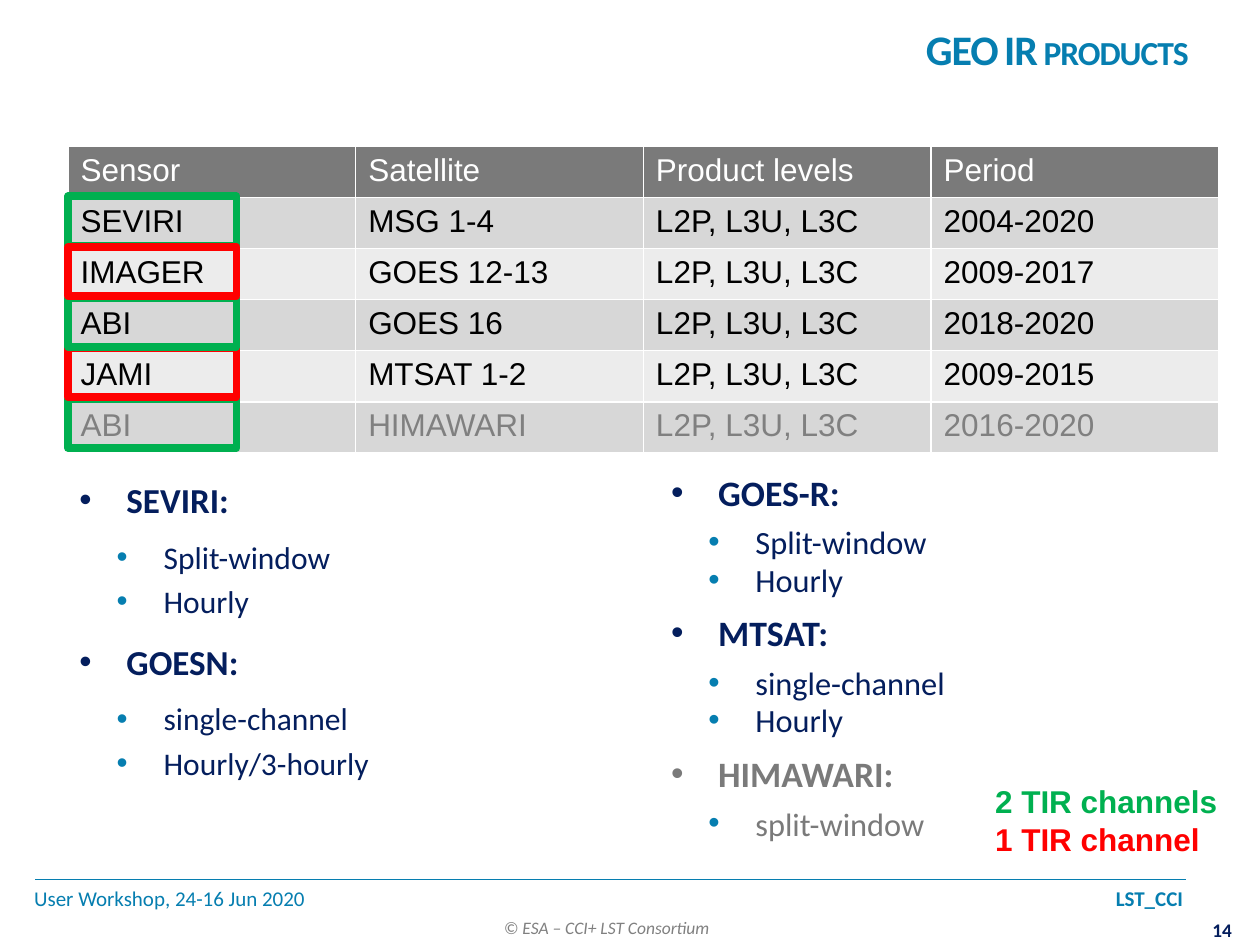
from dataclasses import dataclass

from lxml import etree
from pptx import Presentation
from pptx import util as u
from pptx.dml.color import RGBColor
from pptx.enum import shapes as s, text as t
from pptx.oxml.ns import qn

COLOURS = {
    "blue": "067EB0", "navy": "041E5D", "grey": "808080", "dark_grey": "7A7A7A",
    "odd_band": "D7D7D7", "even_band": "ECECEC", "white": "FFFFFF",
    "black": "000000", "green": "00B050", "red": "FF0000",
}
HEADINGS = ("Sensor", "Satellite", "Product levels", "Period")
LEVELS = "L2P, L3U, L3C"


@dataclass(frozen=True)
class Product:
    sensor: str
    satellite: str
    period: str
    frame: str
    colour: str = "black"


@dataclass(frozen=True)
class Topic:
    name: str
    details: tuple[str, ...]
    colour: str = "navy"


@dataclass(frozen=True)
class TopicList:
    left: float
    heading_size: float
    detail_size: float
    line_spacing: float
    topics: tuple[Topic, ...]


PRODUCTS = (
    Product("SEVIRI", "MSG 1-4", "2004-2020", "green"),
    Product("IMAGER", "GOES 12-13", "2009-2017", "red"),
    Product("ABI", "GOES 16", "2018-2020", "green"),
    Product("JAMI", "MTSAT 1-2", "2009-2015", "red"),
    Product("ABI", "HIMAWARI", "2016-2020", "green", "grey"),
)
TOPIC_LISTS = (
    TopicList(1.35, 20, 18, 1.0, (
        Topic("SEVIRI:", ("Split-window", "Hourly")),
        Topic("GOESN:", ("single-channel", "Hourly/3-hourly")),
    )),
    TopicList(13.28, 20.4, 18.5, 0.8, (
        Topic("GOES-R:", ("Split-window", "Hourly")),
        Topic("MTSAT:", ("single-channel", "Hourly")),
        Topic("HIMAWARI:", ("split-window",), "dark_grey"),
    )),
)


def rgb(name: str) -> RGBColor:
    return RGBColor.from_string(COLOURS[name])


def set_values(target, values: dict) -> None:
    for name, value in values.items():
        setattr(target, name, value)


def add_run(paragraph, words: str, size: float, colour: str, font: str = "Calibri", **values):
    run = paragraph.add_run()
    run.text = words
    set_values(run.font, {"name": font, "size": u.Pt(size), **values})
    run.font.color.rgb = rgb(colour)
    return run


def add_text_frame(slide, left: float, top: float, width: float, height: float, **values):
    box = slide.shapes.add_textbox(u.Cm(left), u.Cm(top), u.Cm(width), u.Cm(height))
    set_values(box.text_frame, {"word_wrap": True, **values})
    return box.text_frame


def add_bullet(paragraph, margin: float, colour: str) -> None:
    properties = paragraph._p.get_or_add_pPr()
    properties.set("marL", str(u.Cm(margin)))
    properties.set("indent", str(-u.Cm(0.95)))
    bullet_colour = etree.SubElement(properties, qn("a:buClr"))
    etree.SubElement(bullet_colour, qn("a:srgbClr"), val=COLOURS[colour])
    etree.SubElement(properties, qn("a:buFont"), typeface="Arial")
    etree.SubElement(properties, qn("a:buChar"), char="•")


def add_footer(slide) -> None:
    frame = add_text_frame(slide, 0.69, 17.73, 23.22, 0.76, margin_left=0, margin_right=0)
    paragraph = frame.paragraphs[0]
    tabs = etree.SubElement(paragraph._p.get_or_add_pPr(), qn("a:tabLst"))
    etree.SubElement(tabs, qn("a:tab"), pos=str(u.Cm(23.16)), algn="r")
    add_run(paragraph, "User Workshop, 24-16 Jun 2020\t", 12, "blue")
    add_run(paragraph, "LST_CCI", 12, "blue", bold=True)

    rule = slide.shapes.add_connector(
        s.MSO_CONNECTOR.STRAIGHT, u.Cm(0.71), u.Cm(17.73), u.Cm(23.9), u.Cm(17.73))
    rule.line.color.rgb = rgb("blue")
    rule.line.width = u.Pt(1)
    etree.SubElement(rule._element.spPr, qn("a:effectLst"))

    frame = add_text_frame(slide, 9.91, 18.36, 4.72, 0.69, word_wrap=False)
    add_run(frame.paragraphs[0], "© ESA – CCI+ LST Consortium", 10, "grey", italic=True)

    frame = add_text_frame(slide, 24.31, 18.52, 0.66, 0.48, word_wrap=False,
                           margin_left=0, margin_right=0, margin_top=0, margin_bottom=0)
    frame.paragraphs[0].alignment = t.PP_ALIGN.CENTER
    add_run(frame.paragraphs[0], "14", 11, "navy", bold=True)


def add_title(slide) -> None:
    frame = add_text_frame(slide, 8.89, 0.13, 15.01, 1.7, vertical_anchor=t.MSO_ANCHOR.MIDDLE)
    frame.paragraphs[0].alignment = t.PP_ALIGN.RIGHT
    run = add_run(frame.paragraphs[0], "GEO IR products", 24, "blue", bold=True)
    set_run = run.font._element.set
    set_run("cap", "small")
    set_run("spc", "-60")


def fill_cell(cell, words: str, fill: str, colour: str) -> None:
    add_run(cell.text_frame.paragraphs[0], words, 18, colour, "Arial")
    properties = cell._tc.get_or_add_tcPr()
    for side in ("lnL", "lnR", "lnT", "lnB"):
        border = etree.SubElement(properties, qn(f"a:{side}"), w=str(u.Pt(1)))
        solid = etree.SubElement(border, qn("a:solidFill"))
        etree.SubElement(solid, qn("a:srgbClr"), val=COLOURS["white"])
    cell.fill.solid()
    cell.fill.fore_color.rgb = rgb(fill)


def add_product_table(slide) -> None:
    rows = [(HEADINGS, "dark_grey", "white")]
    for index, product in enumerate(PRODUCTS):
        words = (product.sensor, product.satellite, LEVELS, product.period)
        rows.append((words, "even_band" if index % 2 else "odd_band", product.colour))
    table = slide.shapes.add_table(
        len(rows), len(HEADINGS), u.Cm(1.37), u.Cm(2.95), u.Cm(23.2), u.Cm(6.18)).table
    for row, (words, fill, colour) in enumerate(rows):
        for column, word in enumerate(words):
            fill_cell(table.cell(row, column), word, fill, colour)


def add_sensor_frames(slide) -> None:
    """Frame each sensor; every frame after the first overlaps the one below it."""
    for row in (0, *range(len(PRODUCTS) - 1, 0, -1)):
        frame = slide.shapes.add_shape(
            s.MSO_SHAPE.RECTANGLE, u.Cm(1.37), u.Cm(3.96 + 1.02 * row), u.Cm(3.4), u.Cm(0.99))
        frame.shadow.inherit = False
        frame.fill.background()
        frame.line.color.rgb = rgb(PRODUCTS[row].frame)
        frame.line.width = u.Pt(4.5)
        etree.SubElement(frame.line._get_or_add_ln(), qn("a:round"))


def add_legend(slide) -> None:
    frame = add_text_frame(slide, 19.81, 15.65, 5.3, 1.8, word_wrap=False)
    add_run(frame.paragraphs[0], "2 TIR channels", 18, "green", "Arial", bold=True)
    add_run(frame.add_paragraph(), "1 TIR channel", 18, "red", "Arial", bold=True)


def add_topic_list(slide, topic_list: TopicList) -> None:
    frame = add_text_frame(slide, topic_list.left, 9.53, 11.63, 7.92)
    for index, topic in enumerate(topic_list.topics):
        heading = frame.add_paragraph() if index else frame.paragraphs[0]
        add_bullet(heading, 0.95, topic.colour)
        set_values(heading, {"line_spacing": topic_list.line_spacing,
                             "space_before": u.Pt(12 if index else 0), "space_after": u.Pt(6)})
        add_run(heading, topic.name, topic_list.heading_size, topic.colour, bold=True)
        for words in topic.details:
            detail = frame.add_paragraph()
            add_bullet(detail, 1.7, "blue")
            set_values(detail, {"level": 1, "line_spacing": topic_list.line_spacing,
                                "space_before": u.Pt(3.6)})
            add_run(detail, words, topic_list.detail_size, topic.colour)


def main() -> None:
    presentation = Presentation()
    set_values(presentation, {"slide_width": u.Cm(25.4), "slide_height": u.Cm(19.05)})
    slide = presentation.slides.add_slide(presentation.slide_layouts[6])
    for draw in (add_footer, add_title, add_product_table, add_sensor_frames, add_legend):
        draw(slide)
    for topic_list in TOPIC_LISTS:
        add_topic_list(slide, topic_list)
    presentation.save("out.pptx")


if __name__ == "__main__":
    main()
